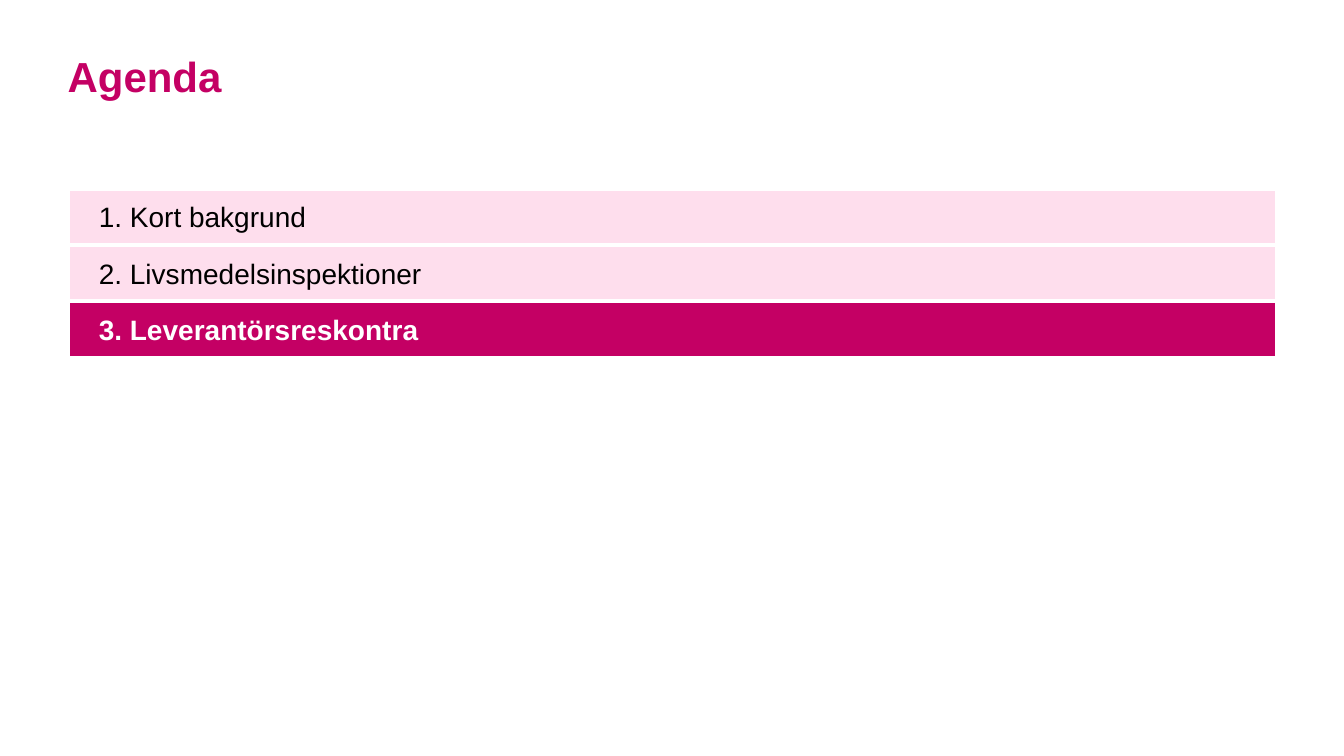
from pptx import Presentation
from pptx.dml.color import RGBColor
from pptx.enum.shapes import MSO_SHAPE
from pptx.enum.text import MSO_ANCHOR, MSO_AUTO_SIZE, PP_ALIGN
from pptx.util import Inches, Pt

RECT = MSO_SHAPE.RECTANGLE
TOP, MIDDLE = MSO_ANCHOR.TOP, MSO_ANCHOR.MIDDLE
NO_AUTOFIT = MSO_AUTO_SIZE.NONE
LEFT = PP_ALIGN.LEFT

MAGENTA = RGBColor(0xC4, 0x00, 0x64)
PINK = RGBColor(0xFE, 0xDE, 0xED)
BLACK = RGBColor(0x00, 0x00, 0x00)
WHITE = RGBColor(0xFF, 0xFF, 0xFF)

MARGIN, WIDTH = 0.67, 12
BAR_TOP, BAR_HEIGHT = 1.87, 0.56
AGENDA = ["1. Kort bakgrund", "2. Livsmedelsinspektioner", "3. Leverantörsreskontra"]
CURRENT = 2


class AgendaSlide:
    font = "Arial"

    def __init__(self, prs):
        self.slide = prs.slides.add_slide(prs.slide_layouts[5])

    def set_text(self, sp, text, size, color, bold, anchor, insets):
        tf = sp.text_frame
        tf.text = text
        tf.word_wrap = True
        tf.auto_size = NO_AUTOFIT
        tf.vertical_anchor = anchor
        (tf.margin_left, tf.margin_top,
         tf.margin_right, tf.margin_bottom) = [Inches(v) for v in insets]
        p = tf.paragraphs[0]
        p.alignment = LEFT
        r = p.runs[0]
        r.font.name = self.font
        r.font.size = Pt(size)
        r.font.bold = bold
        r.font.color.rgb = color
        return p

    def title(self, text):
        sp = self.slide.shapes.title
        sp.left, sp.top = Inches(MARGIN), Inches(0.5)
        sp.width, sp.height = Inches(WIDTH), Inches(0.91)
        self.set_text(sp, text, 30, MAGENTA, True, TOP, (0, 0, 0, 0))

    def bar(self, text, top, current):
        sp = self.slide.shapes.add_shape(
            RECT, Inches(MARGIN), Inches(top), Inches(WIDTH), Inches(BAR_HEIGHT))
        sp.shadow.inherit = False
        sp.fill.solid()
        sp.fill.fore_color.rgb = MAGENTA if current else PINK
        sp.line.color.rgb = WHITE
        sp.line.width = Pt(3)
        p = self.set_text(sp, text, 20, WHITE if current else BLACK, current,
                          MIDDLE, (0.11, 0.11, 0, 0.11))
        p._p.get_or_add_pPr().set("marL", str(Inches(0.2)))


def main():
    prs = Presentation()
    prs.slide_width, prs.slide_height = Inches(13.33), Inches(7.5)
    s = AgendaSlide(prs)

    # Heading
    s.title("Agenda")

    # Agenda bars, with the current item highlighted
    for i, item in enumerate(AGENDA):
        s.bar(item, BAR_TOP + i * BAR_HEIGHT, i == CURRENT)

    prs.save("out.pptx")


if __name__ == "__main__":
    main()
